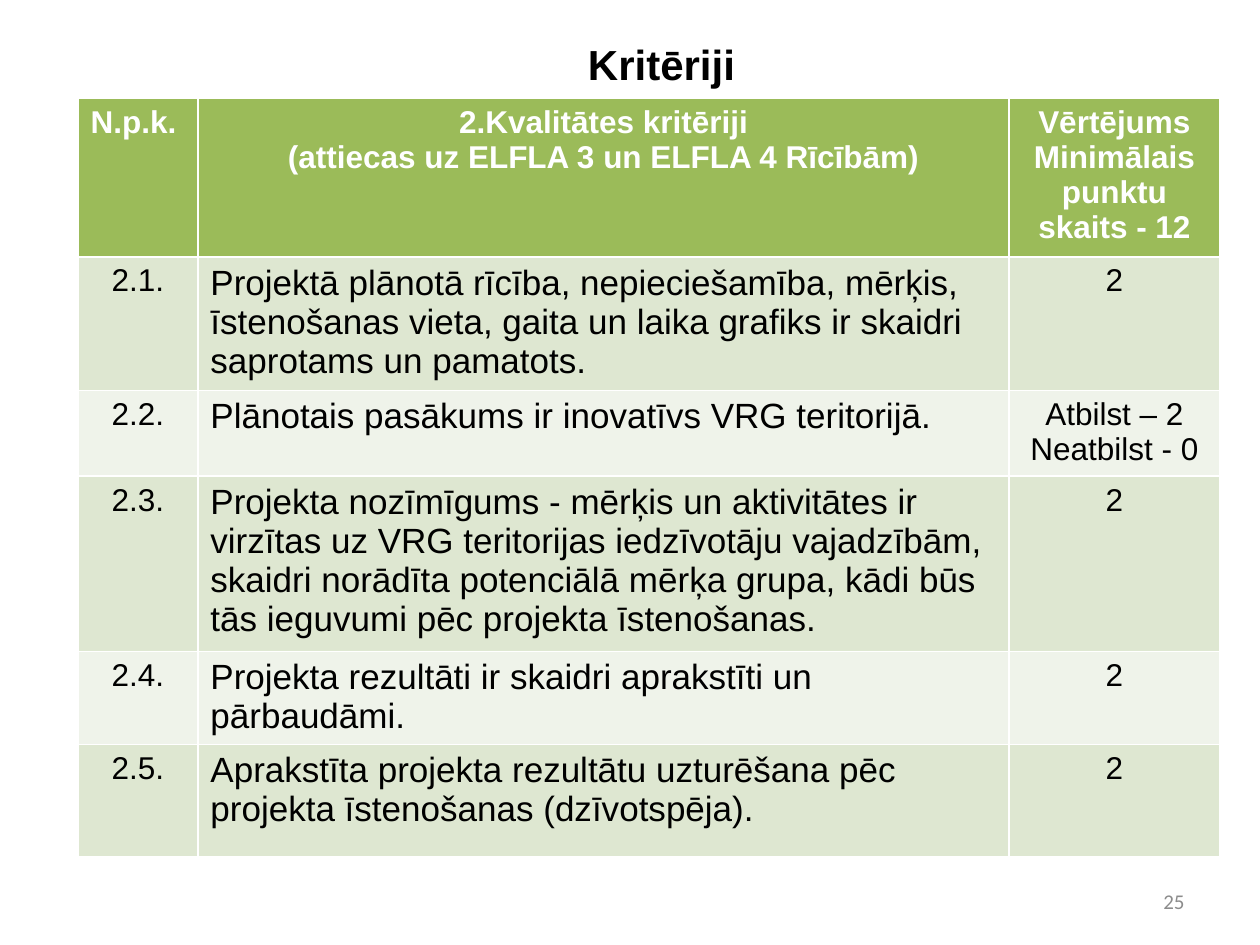
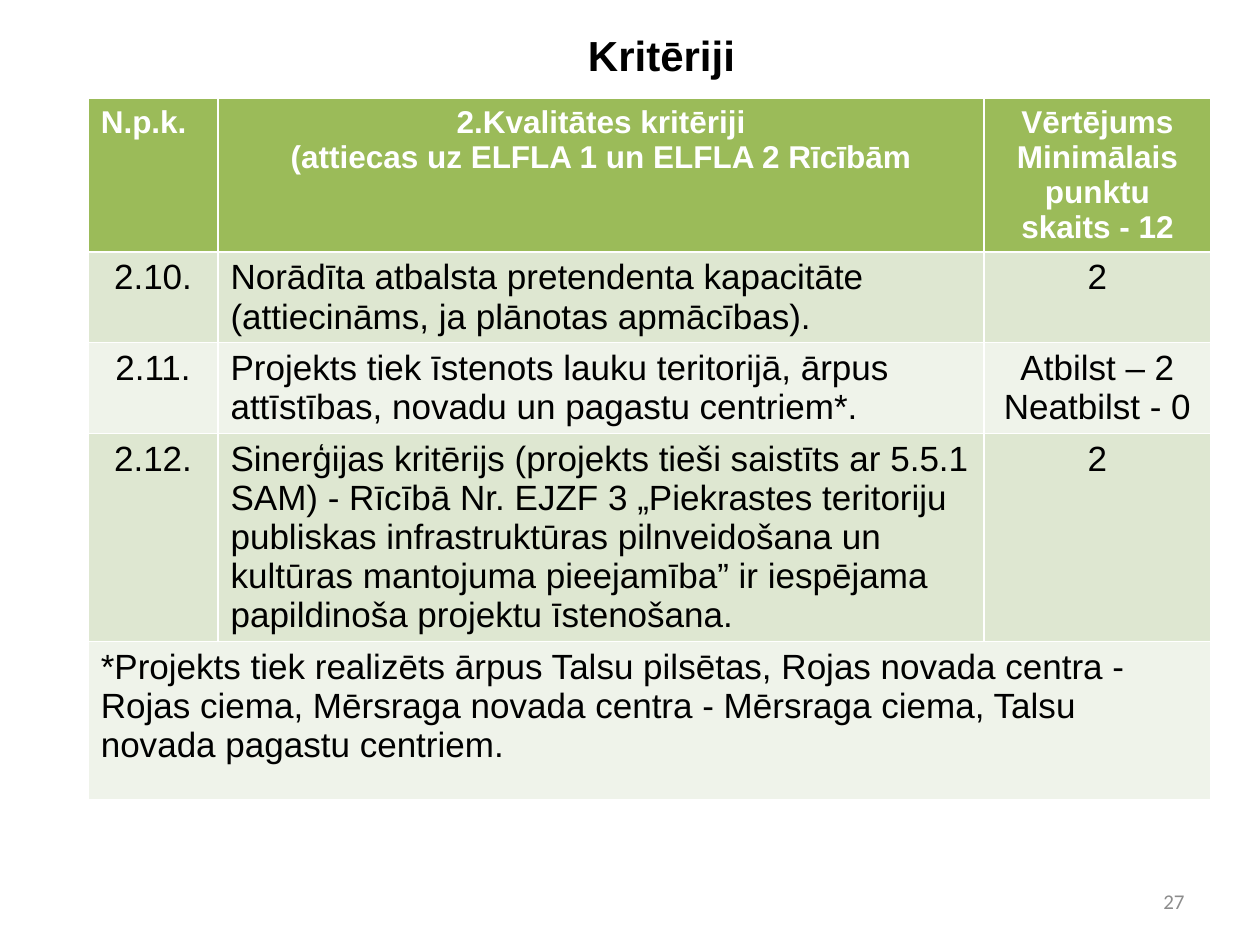
from pptx import Presentation, util as u
from pptx.dml.color import RGBColor
from pptx.enum import text

GREEN = RGBColor(0x9B, 0xBB, 0x59)
BAND_DARK = RGBColor(0xDE, 0xE7, 0xD1)
BAND_LIGHT = RGBColor(0xEF, 0xF3, 0xEA)
WHITE = RGBColor(0xFF, 0xFF, 0xFF)
BLACK = RGBColor(0, 0, 0)
GREY = RGBColor(0x8C, 0x8C, 0x8C)

LEFT, CENTER, RIGHT = text.PP_ALIGN.LEFT, text.PP_ALIGN.CENTER, text.PP_ALIGN.RIGHT
TITLE = "Kritēriji"
MATCH = "Atbilst – 2\nNeatbilst - 0"
TABLE_TOP = 0.78

SLIDES = [
    {
        "number": "25", "title_top": 0.23, "left": 0.62, "side_size": 18,
        "cols": [0.95, 6.44, 1.67],
        "heights": [1.26, 1.06, 0.68, 1.39, 0.74, 0.89],
        "rows": [
            ("N.p.k.",
             "2.Kvalitātes kritēriji\n(attiecas uz ELFLA 3 un ELFLA 4 Rīcībām)",
             "Vērtējums\nMinimālais punktu skaits - 12"),
            ("2.1.", "Projektā plānotā rīcība, nepieciešamība, mērķis, īstenošanas vieta, "
             "gaita un laika grafiks ir skaidri saprotams un pamatots.", "2"),
            ("2.2.", "Plānotais pasākums ir inovatīvs VRG teritorijā.", MATCH),
            ("2.3.", "Projekta nozīmīgums - mērķis un aktivitātes ir virzītas uz VRG "
             "teritorijas iedzīvotāju vajadzībām, skaidri norādīta potenciālā mērķa grupa, "
             "kādi būs tās ieguvumi pēc projekta īstenošanas.", "2"),
            ("2.4.", "Projekta rezultāti ir skaidri aprakstīti un pārbaudāmi.", "2"),
            ("2.5.", "Aprakstīta projekta rezultātu uzturēšana pēc projekta īstenošanas "
             "(dzīvotspēja).", "2"),
        ],
    },
    {
        "number": "27", "title_top": 0.16, "left": 0.7, "side_size": 20,
        "cols": [1.03, 6.08, 1.8],
        "heights": [1.15, 0.62, 0.62, 1.42, 1.26],
        "rows": [
            ("N.p.k.",
             "2.Kvalitātes kritēriji\n(attiecas uz ELFLA 1 un ELFLA 2 Rīcībām",
             "Vērtējums Minimālais punktu skaits - 12"),
            ("2.10.", "Norādīta atbalsta pretendenta kapacitāte (attiecināms, ja plānotas "
             "apmācības).", "2"),
            ("2.11.", "Projekts tiek īstenots lauku teritorijā, ārpus attīstības, novadu un "
             "pagastu centriem*.", MATCH),
            ("2.12.", "Sinerģijas kritērijs (projekts tieši saistīts ar 5.5.1 SAM) - Rīcībā "
             "Nr. EJZF 3 „Piekrastes teritoriju publiskas infrastruktūras pilnveidošana un "
             "kultūras mantojuma pieejamība” ir iespējama papildinoša projektu īstenošana.", "2"),
            ("*Projekts tiek realizēts ārpus Talsu pilsētas, Rojas novada centra - Rojas "
             "ciema, Mērsraga novada centra - Mērsraga ciema, Talsu novada pagastu centriem.",),
        ],
    },
]


def write(tf, words, align, size, color, bold=False, name="Arial"):
    tf.text = words
    tf.word_wrap = True
    for p in tf.paragraphs:
        p.alignment = align
        for r in p.runs:
            for key, value in {"name": name, "size": u.Pt(size), "bold": bold}.items():
                setattr(r.font, key, value)
            r.font.color.rgb = color


def add_title(s, top):
    sp = s.shapes.title
    box = {"left": 1, "top": top, "width": 8.5, "height": 0.55}
    for key, value in box.items():
        setattr(sp, key, u.Inches(value))
    write(sp.text_frame, TITLE, CENTER, 24, BLACK, bold=True)
    sp.text_frame.auto_size = text.MSO_AUTO_SIZE.NONE
    sp.text_frame.vertical_anchor = text.MSO_ANCHOR.MIDDLE


def add_criteria(s, page):
    rows, cols, heights = page["rows"], page["cols"], page["heights"]
    box = [u.Inches(v) for v in (page["left"], TABLE_TOP, sum(cols), sum(heights))]
    table = s.shapes.add_table(len(rows), len(cols), *box).table
    table.horz_banding = False
    for column, width in zip(table.columns, cols):
        column.width = u.Inches(width)
    for i, (row, height) in enumerate(zip(rows, heights)):
        table.rows[i].height = u.Inches(height)
        is_note = len(row) == 1
        if is_note:
            table.cell(i, 0).merge(table.cell(i, len(cols) - 1))
        for j, words in enumerate(row):
            cell = table.cell(i, j)
            cell.fill.solid()
            if i == 0:
                cell.fill.fore_color.rgb = GREEN
                write(cell.text_frame, words, CENTER if j else LEFT, 18, WHITE, bold=True)
            else:
                cell.fill.fore_color.rgb = BAND_DARK if i % 2 else BAND_LIGHT
                is_wide = j == 1 or is_note
                write(cell.text_frame, words, LEFT if is_wide else CENTER,
                      20 if is_wide else page["side_size"], BLACK)


def add_page_number(s, number):
    box = [u.Inches(v) for v in (7.17, 6.95, 2.33, 0.4)]
    tf = s.shapes.add_textbox(*box).text_frame
    tf.vertical_anchor = text.MSO_ANCHOR.MIDDLE
    write(tf, number, RIGHT, 12, GREY, name="Calibri")


def main():
    prs = Presentation()
    prs.slide_width, prs.slide_height = u.Inches(10), u.Inches(7.5)
    for page in SLIDES:
        s = prs.slides.add_slide(prs.slide_layouts[5])
        add_title(s, page["title_top"])
        add_criteria(s, page)
        add_page_number(s, page["number"])
    prs.save("out.pptx")


if __name__ == "__main__":
    main()
